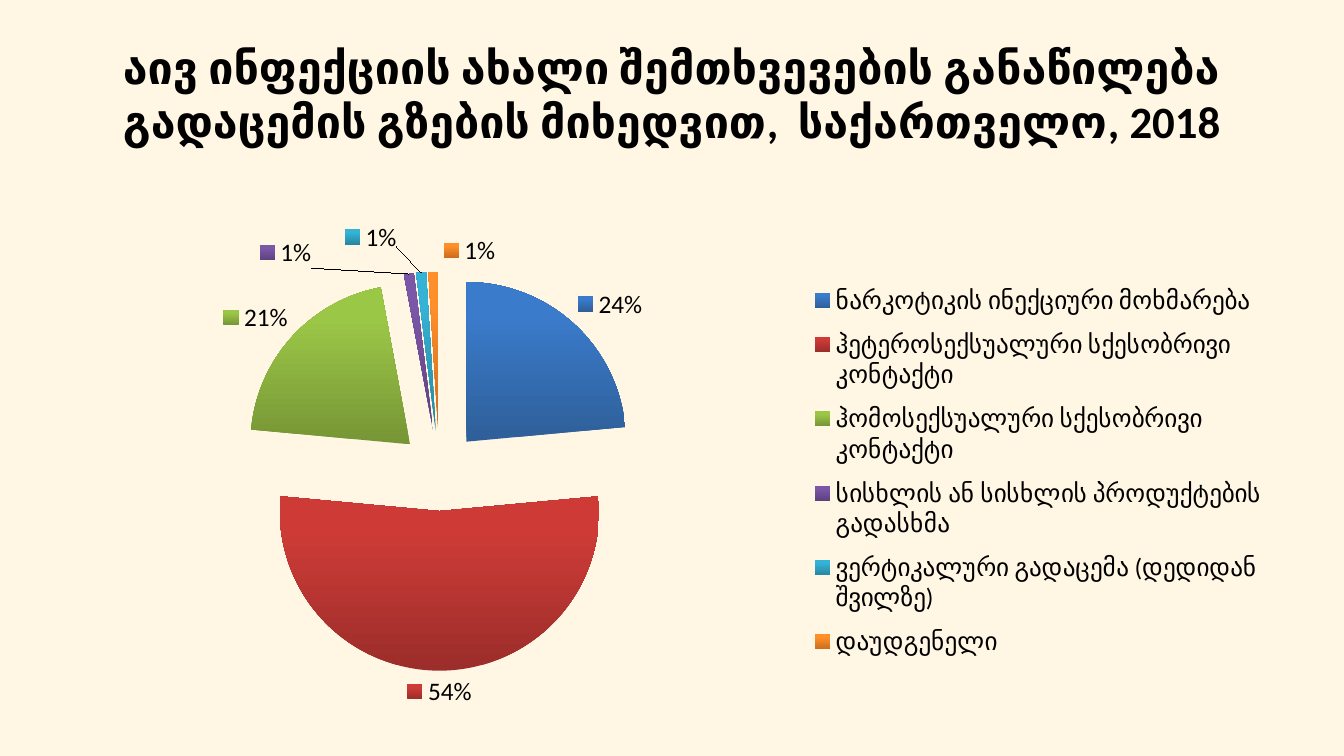
from lxml.etree import SubElement
from pptx import Presentation
from pptx.chart.data import CategoryChartData
from pptx.dml.color import RGBColor
from pptx.enum.chart import XL_CHART_TYPE, XL_LABEL_POSITION, XL_LEGEND_POSITION
from pptx.enum.text import MSO_ANCHOR, PP_ALIGN
from pptx.oxml.ns import qn
from pptx.util import Cm, Pt

FONT = "Calibri"
COLORS = {"background": "FFF6E3", "text": "000000"}

# Transmission route: share, dark colour (bottom), light colour (top)
ROUTES = {
    "ნარკოტიკის ინექციური მოხმარება": (0.24, "2E5F99", "3A7BCB"),
    "ჰეტეროსექსუალური სქესობრივი კონტაქტი": (0.54, "9B2D2A", "CE3B37"),
    "ჰომოსექსუალური სქესობრივი კონტაქტი": (0.21, "769535", "9BC747"),
    "სისხლის ან სისხლის პროდუქტების გადასხმა": (0.01, "5D417E", "7B57A8"),
    "ვერტიკალური გადაცემა (დედიდან შვილზე)": (0.01, "2787A0", "34B3D6"),
    "დაუდგენელი": (0.01, "CB6C1D", "FF8F2A"),
}
# Shifts of the crowded small labels, as fractions of the chart
LABEL_SHIFTS = {3: (-0.08, 0), 4: (-0.02, -0.04), 5: (0.03, 0)}


def set_layout(parent, index, **values):
    """Give a chart part a manual layout, placed at the given child index."""
    for old_layout in parent.findall(qn("c:layout")):
        parent.remove(old_layout)
    layout = SubElement(parent, qn("c:layout"))
    manual = SubElement(layout, qn("c:manualLayout"))
    for name, value in values.items():
        SubElement(manual, qn(f"c:{name}")).set("val", str(value))
    parent.insert(index, layout)


def style_font(font, size):
    font.name = FONT
    font.size = Pt(size)
    font.color.rgb = RGBColor.from_string(COLORS["text"])


presentation = Presentation()
presentation.slide_width = Cm(33.87)
presentation.slide_height = Cm(19.05)
slide = presentation.slides.add_slide(presentation.slide_layouts[6])
slide.background.fill.solid()
slide.background.fill.fore_color.rgb = RGBColor.from_string(COLORS["background"])

# Title
title = slide.shapes.add_textbox(Cm(1.69), Cm(0.76), Cm(30.48), Cm(3.18))
title.text_frame.word_wrap = True
title.text_frame.vertical_anchor = MSO_ANCHOR.MIDDLE
paragraph = title.text_frame.paragraphs[0]
paragraph.alignment = PP_ALIGN.CENTER
run = paragraph.add_run()
run.text = "აივ ინფექციის ახალი შემთხვევების განაწილება გადაცემის გზების მიხედვით,  საქართველო, 2018"
style_font(run.font, 32)
run.font.bold = True

# Pie chart
chart_data = CategoryChartData(number_format="0%")
chart_data.categories = list(ROUTES)
chart_data.add_series("Series 1", [share for share, _, _ in ROUTES.values()])
chart = slide.shapes.add_chart(
    XL_CHART_TYPE.PIE, Cm(1.78), Cm(5.59), Cm(30.48), Cm(12.57), chart_data
).chart
chart.has_title = False
style_font(chart.font, 18)
plot = chart.plots[0]
plot.vary_by_categories = True
series = plot.series[0]
plot_area = next(chart.element.iter(qn("c:plotArea")))
set_layout(plot_area, 0, layoutTarget="inner", xMode="edge", yMode="edge",
           x=0.14, y=0.1, w=0.33, h=0.8)

# Legend
chart.has_legend = True
chart.legend.position = XL_LEGEND_POSITION.RIGHT
chart.legend.include_in_layout = False
style_font(chart.legend.font, 18)
legend_element = next(chart.element.iter(qn("c:legend")))
set_layout(legend_element, 1, xMode="edge", yMode="edge",
           x=0.61, y=0.1, w=0.38, h=0.8)

# Slices, shaded from bottom to top and pulled apart
for index, (_, dark, light) in enumerate(ROUTES.values()):
    fill = series.points[index].format.fill
    fill.gradient()
    fill.gradient_angle = 90
    for stop, color, position in zip(fill.gradient_stops, (dark, light), (0, 0.8)):
        stop.color.rgb = RGBColor.from_string(color)
        stop.position = position
series_element = next(chart.element.iter(qn("c:ser")))
explosion = SubElement(series_element, qn("c:explosion"))
explosion.set("val", "25")
series_element.find(qn("c:dPt")).addprevious(explosion)

# Value labels with legend keys
labels = series.data_labels
labels.show_value = True
labels.show_percentage = False
labels.show_legend_key = True
labels.number_format = "0%"
labels.number_format_is_linked = False
labels.position = XL_LABEL_POSITION.OUTSIDE_END
style_font(labels.font, 18)
for index in LABEL_SHIFTS:
    label = series.points[index].data_label
    label.position = XL_LABEL_POSITION.OUTSIDE_END
    style_font(label.font, 18)
for label_element, (x, y) in zip(chart.element.iter(qn("c:dLbl")), LABEL_SHIFTS.values()):
    label_element.find(qn("c:showLegendKey")).set("val", "1")
    set_layout(label_element, 1, x=x, y=y)

presentation.save("out.pptx")
